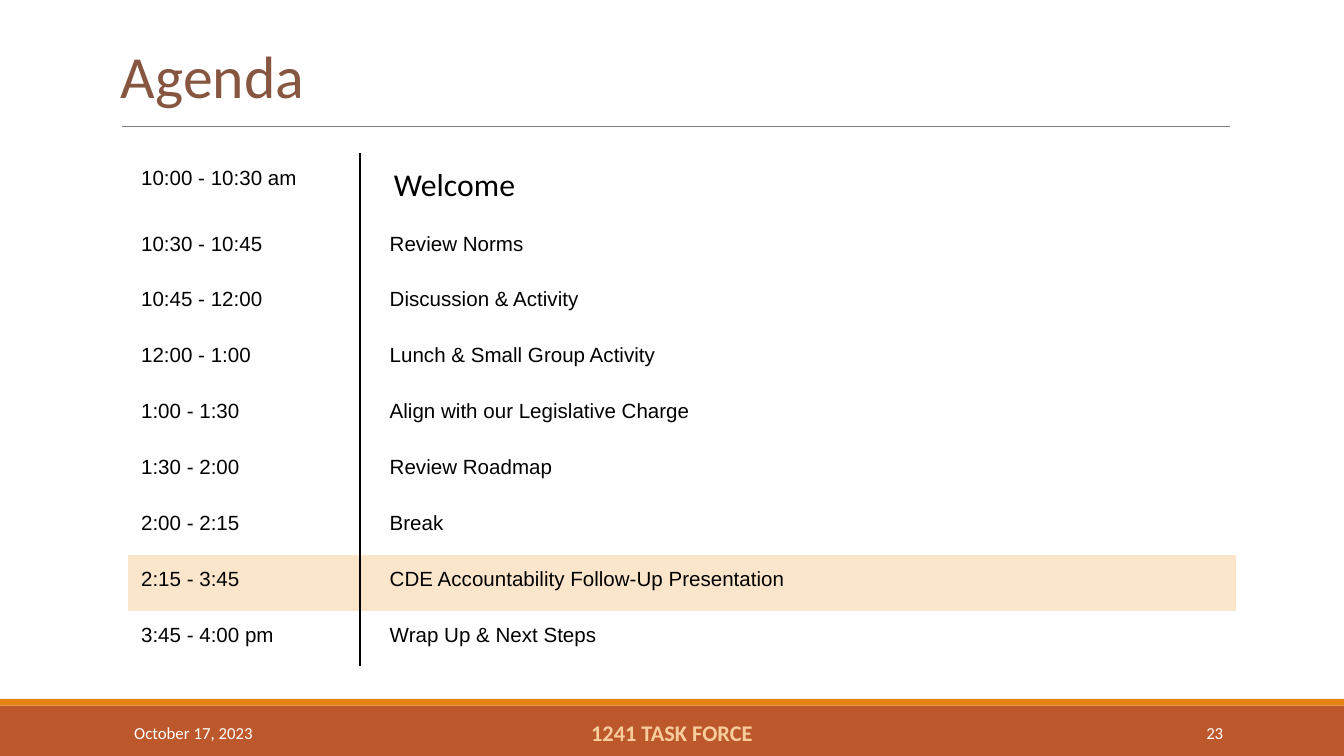
"""Build the agenda slide with its timetable and footer band."""
from lxml import etree
from pptx import Presentation
from pptx.dml.color import RGBColor
from pptx.enum import shapes, text
from pptx.oxml import ns
from pptx.util import Inches, Pt

AGENDA = [
    ("10:00 - 10:30 am", "Welcome"),
    ("10:30 - 10:45", "Review Norms"),
    ("10:45 - 12:00", "Discussion & Activity"),
    ("12:00 - 1:00", "Lunch & Small Group Activity"),
    ("1:00 - 1:30", "Align with our Legislative Charge"),
    ("1:30 - 2:00", "Review Roadmap"),
    ("2:00 - 2:15", "Break"),
    ("2:15 - 3:45", "CDE Accountability Follow-Up Presentation"),
    ("3:45 - 4:00 pm", "Wrap Up & Next Steps"),
]
CURRENT = 7


def rgb(value):
    """Return the colour for a hex string."""
    return RGBColor.from_string(value)


def add_run(p, content, size, font, color, bold=False):
    """Add one formatted run to a paragraph."""
    r = p.add_run()
    r.text = content
    r.font.size, r.font.name, r.font.bold = Pt(size), font, bold
    r.font.color.rgb = rgb(color)


def set_margins(obj, left, top, right, bottom):
    """Set the inner margins of a text frame or cell in inches."""
    obj.margin_left, obj.margin_top = Inches(left), Inches(top)
    obj.margin_right, obj.margin_bottom = Inches(right), Inches(bottom)


def add_band(s, top, height, color):
    """Add a plain band across the full slide width."""
    sp = s.shapes.add_shape(shapes.MSO_SHAPE.RECTANGLE, 0, Inches(top), Inches(10), Inches(height))
    sp.shadow.inherit = False
    sp.fill.solid()
    sp.fill.fore_color.rgb = rgb(color)
    sp.line.fill.background()


def add_rule(s, left, right, y):
    """Add the thin grey rule below the title."""
    line = s.shapes.add_connector(shapes.MSO_CONNECTOR.STRAIGHT, Inches(left), Inches(y), Inches(right), Inches(y))
    line.line.color.rgb = rgb("7F7F7F")
    line.line.width = Pt(0.75)
    etree.SubElement(line._element.spPr, ns.qn("a:effectLst"))


def set_title(s, content):
    """Place and format the title placeholder."""
    sp = s.shapes.title
    sp.left, sp.top, sp.width, sp.height = Inches(0.9), Inches(0.24), Inches(8.25), Inches(0.63)
    tf = sp.text_frame
    tf.vertical_anchor = text.MSO_ANCHOR.MIDDLE
    set_margins(tf, 0, 0, 0, 0)
    p = tf.paragraphs[0]
    p.alignment = text.PP_ALIGN.LEFT
    add_run(p, content, 32, "Calibri", "865640")


def add_footer(s, left, width, content, align, size=9, color="FFFFFF", bold=False):
    """Add one text box on the footer band."""
    tf = s.shapes.add_textbox(Inches(left), Inches(5.3), Inches(width), Inches(0.3)).text_frame
    tf.word_wrap = True
    tf.vertical_anchor = text.MSO_ANCHOR.MIDDLE
    set_margins(tf, 0.1, 0.05, 0.1, 0.05)
    p = tf.paragraphs[0]
    p.alignment = align
    add_run(p, content, size, "Calibri", color, bold)


def set_borders(cell, visible):
    """Draw the named cell border in black and clear the others."""
    tc_pr = cell._tc.get_or_add_tcPr()
    for i, side in enumerate(("lnL", "lnR", "lnT", "lnB")):
        ln = etree.Element(ns.qn(f"a:{side}"), w=str(Pt(1)))
        if side == visible:
            fill = etree.SubElement(ln, ns.qn("a:solidFill"))
            etree.SubElement(fill, ns.qn("a:srgbClr"), val="000000")
        else:
            etree.SubElement(ln, ns.qn("a:noFill"))
        tc_pr.insert(i, ln)


def fill_cell(cell, content, size, font, indent, color, border):
    """Write and format one agenda cell."""
    set_margins(cell, indent, 0.1, 0.1, 0.1)
    cell.fill.solid()
    cell.fill.fore_color.rgb = rgb(color)
    set_borders(cell, border)
    add_run(cell.text_frame.paragraphs[0], content, size, font, "000000")


def add_agenda(s):
    """Add the timetable with the current item highlighted."""
    frame = s.shapes.add_table(len(AGENDA), 2, Inches(0.95), Inches(1.14), Inches(8.25), Inches(3.82))
    table = frame.table
    table.first_row = table.horz_banding = False
    table.columns[0].width, table.columns[1].width = Inches(1.73), Inches(6.52)
    for i, (time, topic) in enumerate(AGENDA):
        table.rows[i].height = Inches(0.49 if i == 0 else 3.33 / 8)
        color = "FBE6CC" if i == CURRENT else "FFFFFF"
        size, font, indent = (17, "Calibri", 0.25) if i == 0 else (11, "Arial", 0.22)
        fill_cell(table.cell(i, 0), time, 11, "Arial", 0.1, color, "lnR")
        fill_cell(table.cell(i, 1), topic, size, font, indent, color, "lnL")


def main():
    """Build and save the slide."""
    prs = Presentation()
    prs.slide_width, prs.slide_height = Inches(10), Inches(10 * 9 / 16)
    s = prs.slides.add_slide(prs.slide_layouts[5])
    add_band(s, 5.25, 0.38, "BD582C")
    add_band(s, 5.2, 0.05, "E48312")
    add_rule(s, 0.91, 9.15, 0.94)
    set_title(s, "Agenda")
    add_agenda(s)
    add_footer(s, 0.9, 2.03, "October 17, 2023", text.PP_ALIGN.LEFT)
    add_footer(s, 3.02, 3.96, "1241 TASK FORCE", text.PP_ALIGN.CENTER, 12, "F7CD9C", True)
    add_footer(s, 8.12, 1.08, "23", text.PP_ALIGN.RIGHT)
    prs.save("out.pptx")


if __name__ == "__main__":
    main()
